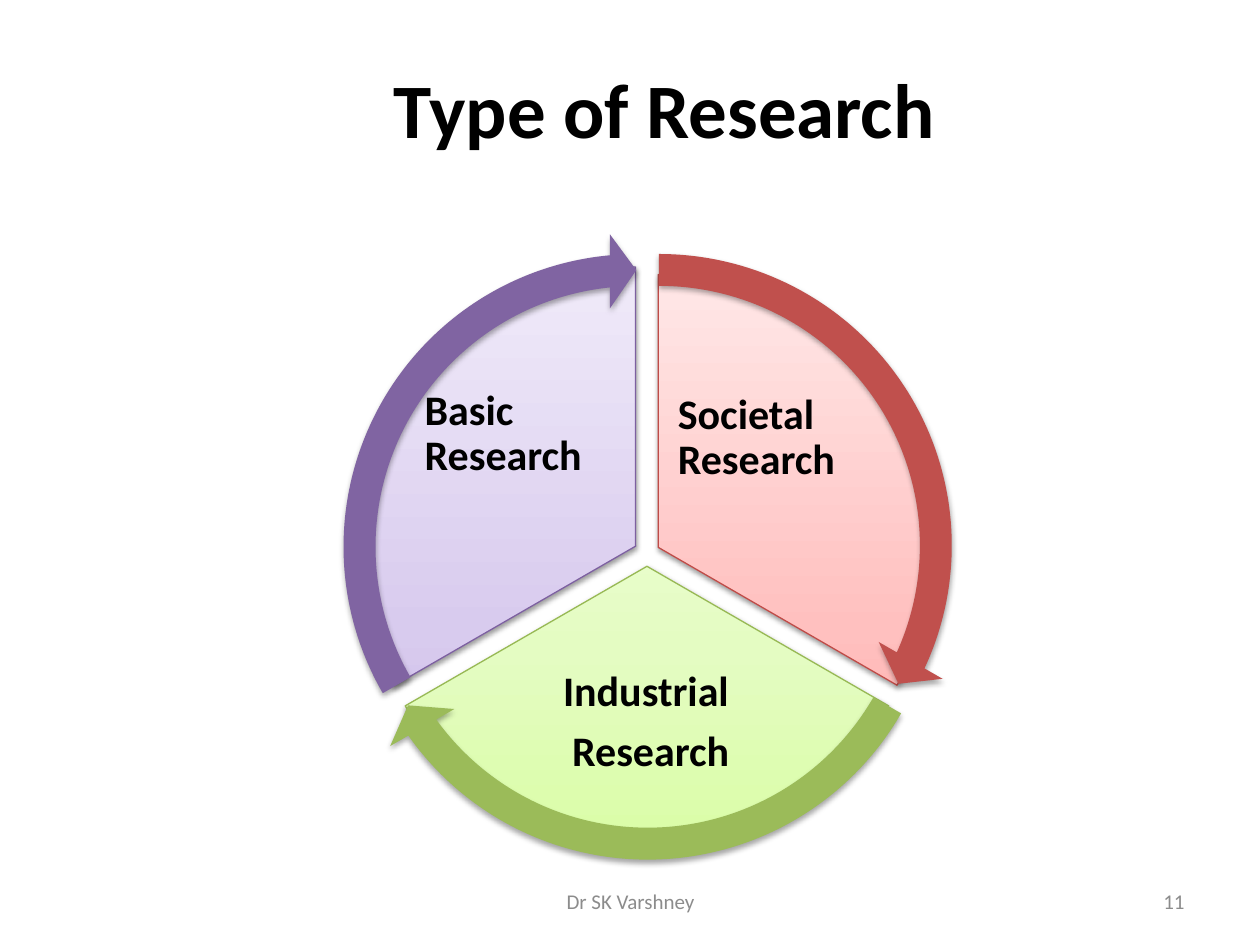
import copy

import pptx
import pptx.dml.color
import pptx.enum.shapes
import pptx.enum.text
import pptx.oxml
import pptx.oxml.ns
import pptx.util

Inches, Pt = pptx.util.Inches, pptx.util.Pt
SHAPE = pptx.enum.shapes.MSO_SHAPE
ALIGN = pptx.enum.text.PP_ALIGN
ANCHOR = pptx.enum.text.MSO_ANCHOR


def rgb(value):
    return pptx.dml.color.RGBColor.from_string(value)


class Deck:
    font = "Calibri"
    ink, muted = "000000", "8C8C8C"

    def __init__(self, width, height):
        self.prs = pptx.Presentation()
        self.prs.slide_width, self.prs.slide_height = Inches(width), Inches(height)
        self.s = self.prs.slides.add_slide(self.prs.slide_layouts[6])

    def shape(self, kind, at, adjustments):
        sp = self.s.shapes.add_shape(kind, *map(Inches, at))
        for i, value in enumerate(adjustments):
            sp.adjustments[i] = value
        return sp

    def shadow(self, sp, alpha, distance):
        sp.shadow.inherit = False
        effects = sp._element.spPr.find(pptx.oxml.ns.qn("a:effectLst"))
        effects.append(pptx.oxml.parse_xml(
            f'<a:outerShdw {pptx.oxml.ns.nsdecls("a")} blurRad="{Pt(3.1)}" '
            f'dist="{Pt(distance)}" dir="5400000" rotWithShape="0">'
            f'<a:srgbClr val="000000"><a:alpha val="{alpha * 1000}"/></a:srgbClr>'
            '</a:outerShdw>'))

    def sector(self, at, angles, colors, line):
        # Pie adjustments are 60000ths of a degree, scaled by 100000
        sp = self.shape(SHAPE.PIE, at, [a * 0.6 for a in angles])
        sp.fill.gradient()
        sp.fill.gradient_angle = 90
        stops = next(sp._element.spPr.iter(pptx.oxml.ns.qn("a:gsLst")))
        stops.append(copy.deepcopy(stops[-1]))
        for stop, position, color in zip(sp.fill.gradient_stops, (0, 0.35, 1), colors):
            stop.position = position
            stop.color.rgb = rgb(color)
        sp.line.color.rgb = rgb(line)
        sp.line.width = Pt(0.75)
        self.shadow(sp, 38, 1.6)

    def arrow(self, at, end, start, color):
        sp = self.shape(SHAPE.CIRCULAR_ARROW, at,
                        (0.051, 3.275, end * 0.6, start * 0.6, 0.059))
        sp.fill.solid()
        sp.fill.fore_color.rgb = rgb(color)
        sp.line.fill.background()
        self.shadow(sp, 35, 1.8)

    def text(self, at, text, size, color=ink, bold=False, align=ALIGN.CENTER,
             anchor=ANCHOR.MIDDLE, inset=None, spacing=None, after=0):
        tf = self.s.shapes.add_textbox(*map(Inches, at)).text_frame
        tf.word_wrap = True
        tf.vertical_anchor = anchor
        if inset is not None:
            tf.margin_left = tf.margin_right = Inches(inset)
            tf.margin_top = tf.margin_bottom = Inches(inset)
        tf.text = text
        for p in tf.paragraphs:
            p.alignment = align
            p.line_spacing = spacing
            p.space_after = Pt(after)
            for r in p.runs:
                r.font.name, r.font.size, r.font.bold = self.font, Pt(size), bold
                r.font.color.rgb = rgb(color)

    def label(self, at, text, align, anchor):
        self.text(at, text, 24, bold=True, align=align, anchor=anchor,
                  inset=0.03, spacing=0.9, after=8.4)


def main():
    deck = Deck(10, 7.5)

    # Sectors of the cycle with their labels
    sectors = [
        ((3.03, 2.18, 4.39, 4.33), (270, 30), ("FFA6A5", "FFC0BF", "FFE7E7"), "BF4C48",
         (5.35, 3.09, 1.57, 1.29), "Societal Research", ALIGN.LEFT, ANCHOR.TOP),
        ((2.92, 2.28, 4.43, 4.43), (30, 150), ("DAFDA7", "E4FCC2", "F5FFE7"), "98B955",
         (3.98, 5.16, 2.37, 1.16), "Industrial \nResearch", ALIGN.CENTER, ANCHOR.MIDDLE),
        ((2.83, 2.12, 4.43, 4.43), (150, 270), ("C9B5E8", "D8CBEE", "F0EAF9"), "7D60A0",
         (3.34, 3.06, 1.58, 1.32), "Basic Research", ALIGN.LEFT, ANCHOR.TOP),
    ]
    for at, angles, colors, line, *label in sectors:
        deck.sector(at, angles, colors, line)
        deck.label(*label)

    # Arrows around the cycle
    deck.arrow((2.74, 1.85, 4.98, 4.96), 24.54, 269.99, "C0504D")
    deck.arrow((2.65, 2.01, 4.98, 4.98), 144.53, 30.01, "9BBB59")
    deck.arrow((2.56, 1.85, 4.98, 4.98), 264.55, 150, "8064A2")

    # Footer and slide number
    deck.text((3.42, 6.95, 3.17, 0.4), "Dr SK Varshney", 12, deck.muted)
    deck.text((7.17, 6.95, 2.33, 0.4), "11", 12, deck.muted, align=ALIGN.RIGHT)

    # Title
    deck.text((1.3, 0.44, 7.95, 0.84), "Type of Research", 44, bold=True,
              anchor=ANCHOR.TOP)

    deck.prs.save("out.pptx")


if __name__ == "__main__":
    main()
